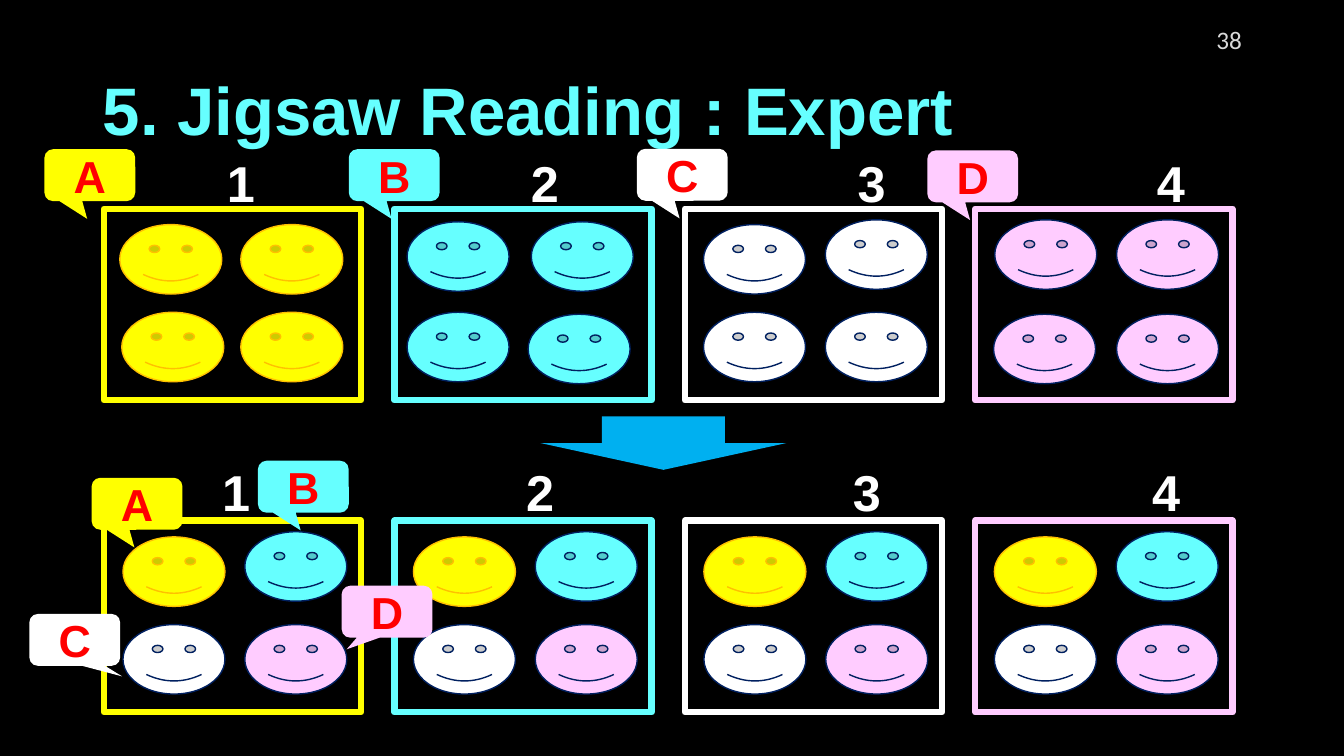
"""Build the Jigsaw Reading slide: expert groups regrouped into mixed groups."""
from dataclasses import dataclass

from pptx import Presentation
from pptx.dml.color import RGBColor
from pptx.enum.shapes import MSO_SHAPE
from pptx.enum.text import MSO_ANCHOR, PP_ALIGN
from pptx.util import Cm, Pt


@dataclass(frozen=True)
class Theme:
    """Colours, fonts and type sizes."""
    background: str = "000000"
    yellow: str = "FFFF00"
    cyan: str = "66FFFF"
    white: str = "FFFFFF"
    pink: str = "FFCCFF"
    gold: str = "FFC000"
    navy: str = "002060"
    arrow: str = "00B0F0"
    red: str = "FF0000"
    grey: str = "D9D9D9"
    font: str = "Arial"
    number_font: str = "Calibri"
    title_size: int = 48
    label_size: int = 36
    letter_size: int = 32
    page_size: int = 18


THEME = Theme()
TITLE = "5. Jigsaw Reading : Expert"
PAGE_NUMBER = "38"
GROUP_COLOURS = (THEME.yellow, THEME.cyan, THEME.white, THEME.pink)
LETTER_COLOURS = dict(zip("ABCD", GROUP_COLOURS))

LABEL_CENTRES = (6.07, 13.73, 21.97, 29.51)
LABEL_ROWS = ((0, 4.59), (-0.12, 12.37))
EXPERT_FACES = (
    ((3.02, 5.66), (6.07, 5.66), (3.07, 7.87), (6.07, 7.87)),
    ((10.26, 5.59), (13.39, 5.59), (10.26, 7.87), (13.31, 7.92)),
    ((17.73, 5.66), (20.8, 5.54), (17.73, 7.87), (20.8, 7.87)),
    ((25.07, 5.54), (28.14, 5.54), (25.04, 7.92), (28.14, 7.92)),
)
MIXED_OFFSETS = ((0.48, 0.41), (3.55, 0.28), (0.48, 2.62), (3.55, 2.62))
TAIL_DOWN = (-0.029, 0.841)
CALLOUTS = (
    ("A", 1.12, 3.76, TAIL_DOWN),
    ("B", 8.79, 3.76, TAIL_DOWN),
    ("C", 16.05, 3.75, TAIL_DOWN),
    ("D", 23.37, 3.79, TAIL_DOWN),
    ("A", 2.31, 12.04, TAIL_DOWN),
    ("B", 6.5, 11.61, TAIL_DOWN),
    ("C", 0.74, 15.47, (0.522, 0.703)),
    ("D", 8.61, 14.76, (-0.444, 0.723)),
)

FRAME_LEFT, FRAME_PITCH = 2.62, 7.32
FRAME_SIZE = (6.48, 4.83)
EXPERT_TOP, MIXED_TOP = 5.26, 13.12
FACE_SIZE = (2.57, 1.75)
CALLOUT_SIZE = (2.29, 1.31)
LABEL_SIZE = (2, 1.6)


def write(shape, text, size, colour, align, bold=True, font=THEME.font):
    frame = shape.text_frame
    frame.text = text
    frame.word_wrap = True
    frame.vertical_anchor = MSO_ANCHOR.MIDDLE
    para = frame.paragraphs[0]
    para.alignment = align
    for span in para.runs:
        span.font.name = font
        span.font.size = Pt(size)
        span.font.bold = bold
        span.font.color.rgb = RGBColor.from_string(colour)


def add_text(page, place, *style, **options):
    box = page.shapes.add_textbox(*map(Cm, place))
    write(box, *style, **options)
    return box


def add_figure(page, kind, place, fill=None, line=None, width=1):
    shape = page.shapes.add_shape(kind, *map(Cm, place))
    shape.shadow.inherit = False
    if fill:
        shape.fill.solid()
        shape.fill.fore_color.rgb = RGBColor.from_string(fill)
    else:
        shape.fill.background()
    if line:
        shape.line.color.rgb = RGBColor.from_string(line)
        shape.line.width = Pt(width)
    else:
        shape.line.fill.background()
    return shape


def add_group(page, left, top, frame_colour, faces):
    for colour, position in faces:
        outline = THEME.gold if colour == THEME.yellow else THEME.navy
        add_figure(page, MSO_SHAPE.SMILEY_FACE, (*position, *FACE_SIZE), colour, outline)
    add_figure(page, MSO_SHAPE.RECTANGLE, (left, top, *FRAME_SIZE), line=frame_colour, width=4.5)


def add_labels(page):
    width, height = LABEL_SIZE
    for shift, middle in LABEL_ROWS:
        for number, centre in enumerate(LABEL_CENTRES, 1):
            place = (centre + shift - width / 2, middle - height / 2, width, height)
            add_text(page, place, str(number), THEME.label_size, THEME.white, PP_ALIGN.CENTER)


def add_groups(page):
    for index, colour in enumerate(GROUP_COLOURS):
        left = FRAME_LEFT + index * FRAME_PITCH
        experts = [(colour, position) for position in EXPERT_FACES[index]]
        add_group(page, left, EXPERT_TOP, colour, experts)
        mixed_colours = (THEME.yellow, THEME.cyan, THEME.white, THEME.pink)
        mixed = [(face, (left + across, MIXED_TOP + down))
                 for face, (across, down) in zip(mixed_colours, MIXED_OFFSETS)]
        add_group(page, left, MIXED_TOP, colour, mixed)


def add_callouts(page):
    for letter, left, top, tail in CALLOUTS:
        callout = add_figure(page, MSO_SHAPE.ROUNDED_RECTANGULAR_CALLOUT,
                             (left, top, *CALLOUT_SIZE), LETTER_COLOURS[letter])
        callout.adjustments[0], callout.adjustments[1] = tail
        write(callout, letter, THEME.letter_size, THEME.red, PP_ALIGN.CENTER)


def main():
    deck = Presentation()
    deck.slide_width, deck.slide_height = Cm(33.87), Cm(19.05)
    page = deck.slides.add_slide(deck.slide_layouts[6])
    page.background.fill.solid()
    page.background.fill.fore_color.rgb = RGBColor.from_string(THEME.background)

    add_text(page, (30, 0.48, 1.55, 1.02), PAGE_NUMBER, THEME.page_size, THEME.grey,
             PP_ALIGN.RIGHT, bold=False, font=THEME.number_font)
    title = add_text(page, (2.34, 1.02, 29.21, 3.68), TITLE, THEME.title_size,
                     THEME.cyan, PP_ALIGN.LEFT)
    title.text_frame.paragraphs[0].line_spacing = 0.9
    add_labels(page)
    add_groups(page)
    add_figure(page, MSO_SHAPE.DOWN_ARROW, (13.62, 10.49, 6.2, 1.35), THEME.arrow)
    add_callouts(page)
    deck.save("out.pptx")


if __name__ == "__main__":
    main()
